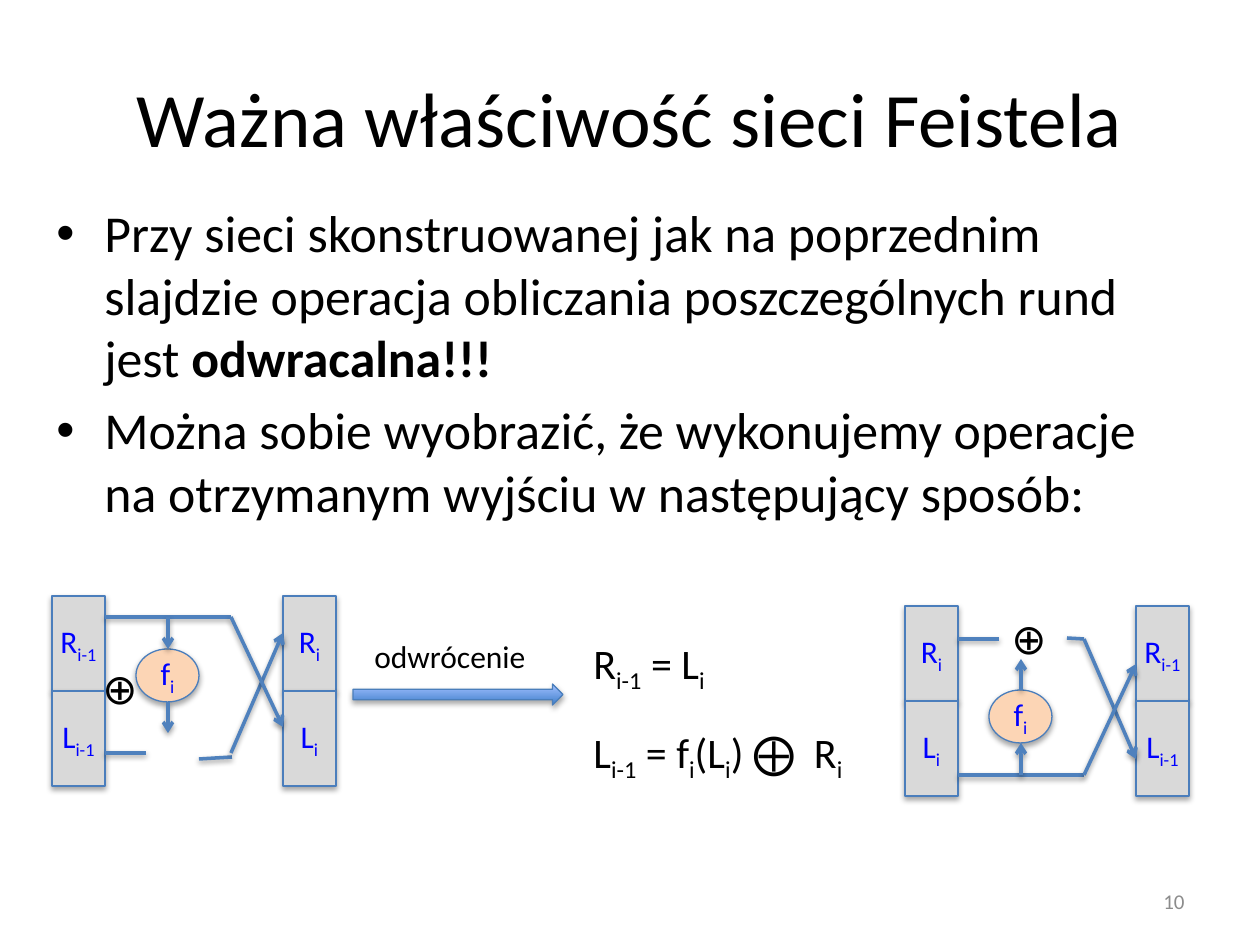
from lxml.etree import SubElement
from pptx import Presentation
from pptx.dml.color import RGBColor
from pptx.enum.shapes import MSO_CONNECTOR, MSO_SHAPE
from pptx.enum.text import MSO_ANCHOR, PP_ALIGN
from pptx.oxml.ns import qn
from pptx.util import Pt

PX = 914400 / 126
THEME = {
    "font": "Calibri", "text": "000000", "symbol": "0000FF", "muted": "8C8C8C",
    "block": "D9D9D9", "round": "FCD5B5", "edge": "4B7EBC", "wire": "4F81BD",
    "title": 44, "body": 29.6, "formula": 24, "label": 18, "number": 12,
}


def px(*values):
    return [round(v * PX) for v in values]


def write(sp, lines, size, color="text", align=PP_ALIGN.LEFT,
          anchor=MSO_ANCHOR.TOP, wrap=True, gap=0, mark="sub"):
    tf = sp.text_frame
    tf.word_wrap, tf.vertical_anchor = wrap, anchor
    for n, line in enumerate(lines):
        p = tf.paragraphs[0] if n == 0 else tf.add_paragraph()
        p.alignment = align
        p.space_before = Pt(gap if n else 0)
        for k, part in enumerate(line.split("|")):
            r = p.add_run()
            r.text = part
            style = {"name": THEME["font"], "size": Pt(THEME[size]),
                     "bold": mark == "bold" and k % 2 == 1}
            for key, value in style.items():
                setattr(r.font, key, value)
            r.font.color.rgb = RGBColor.from_string(THEME[color])
            if mark == "sub" and k % 2:
                r.font._element.set("baseline", "-25000")
    return tf


prs = Presentation()
prs.slide_width, prs.slide_height = px(1260, 945)
s = prs.slides.add_slide(prs.slide_layouts[6])

texts = [
    ((63, 38, 1134, 158), ["Ważna właściwość sieci Feistela"], "title",
     {"align": PP_ALIGN.CENTER, "anchor": MSO_ANCHOR.MIDDLE}),
    ((903, 876, 294, 50), ["10"], "number",
     {"color": "muted", "align": PP_ALIGN.RIGHT, "anchor": MSO_ANCHOR.MIDDLE}),
    ((362, 631, 179, 50), ["odwrócenie"], "label", {"wrap": False}),
    ((581, 631, 278, 146), ["R|i-1| = L|i", "L|i-1| = f|i|(L|i|) ⨁  R|i"],
     "formula", {"wrap": False, "gap": 18}),
    ((90, 656, 52, 63), ["⊕"], "formula", {"wrap": False}),
    ((999, 606, 68, 63), ["⊕"], "formula", {"wrap": False}),
]
for box, lines, size, options in texts:
    write(s.shapes.add_textbox(*px(*box)), lines, size, **options)

body = [
    "Przy sieci skonstruowanej jak na poprzednim slajdzie operacja obliczania "
    "poszczególnych rund jest |odwracalna!!!",
    "Można sobie wyobrazić, że wykonujemy operacje na otrzymanym wyjściu "
    "w następujący sposób:",
]
sp = s.shapes.add_textbox(*px(44, 195, 1134, 318))
tf = write(sp, body, "body", gap=6, mark="bold")
for p in tf.paragraphs:
    pPr = p._p.get_or_add_pPr()
    indent = px(48)[0]
    pPr.set("marL", str(indent))
    pPr.set("indent", str(-indent))
    SubElement(pPr, qn("a:buFont")).set("typeface", "Arial")
    SubElement(pPr, qn("a:buChar")).set("char", "•")

s.shapes.add_shape(MSO_SHAPE.RIGHT_ARROW, *px(353, 684, 210, 21))

rounds = [
    {"origin": (52, 596), "left": ["R|i-1", "L|i-1"], "right": ["R|i", "L|i"],
     "function": (84, 53),
     "wires": [(53, 21, 179, 21), (53, 157, 94, 157), (147, 163, 180, 161)],
     "arrows": [(179, 157, 231, 37), (179, 21, 231, 131),
                (116, 21, 116, 53), (116, 106, 116, 137)]},
    {"origin": (905, 606), "left": ["R|i", "L|i"], "right": ["R|i-1", "L|i-1"],
     "function": (84, 84),
     "wires": [(53, 169, 179, 169), (53, 33, 94, 33), (162, 32, 179, 33)],
     "arrows": [(179, 33, 231, 153), (179, 169, 231, 58),
                (116, 169, 116, 137), (116, 84, 116, 53)]},
]
BLOCK_W, BLOCK_H, COLUMN = 53, 95, 231

for rnd in rounds:
    x0, y0 = rnd["origin"]
    nodes = [(MSO_SHAPE.RECTANGLE, "block", x, row * BLOCK_H, BLOCK_W, BLOCK_H, name)
             for x, names in ((0, rnd["left"]), (COLUMN, rnd["right"]))
             for row, name in enumerate(names)]
    nodes.append((MSO_SHAPE.OVAL, "round", *rnd["function"], 63, 53, "f|i"))
    for kind, fill, x, y, w, h, name in nodes:
        sp = s.shapes.add_shape(kind, *px(x0 + x, y0 + y, w, h))
        sp.fill.solid()
        sp.fill.fore_color.rgb = RGBColor.from_string(THEME[fill])
        sp.line.color.rgb = RGBColor.from_string(THEME["edge"])
        sp.line.width = Pt(0.75)
        tf = write(sp, [name], "label", color="symbol",
                   align=PP_ALIGN.CENTER, anchor=MSO_ANCHOR.MIDDLE)
        tf.margin_left = tf.margin_right = 0
    for x1, y1, x2, y2 in rnd["wires"] + rnd["arrows"]:
        ends = px(x0 + x1, y0 + y1, x0 + x2, y0 + y2)
        wire = s.shapes.add_connector(MSO_CONNECTOR.STRAIGHT, *ends)
        wire.line.color.rgb = RGBColor.from_string(THEME["wire"])
        wire.line.width = Pt(2)
        if (x1, y1, x2, y2) in rnd["arrows"]:
            SubElement(wire.line._get_or_add_ln(), qn("a:tailEnd")).set("type", "arrow")

prs.save("out.pptx")
